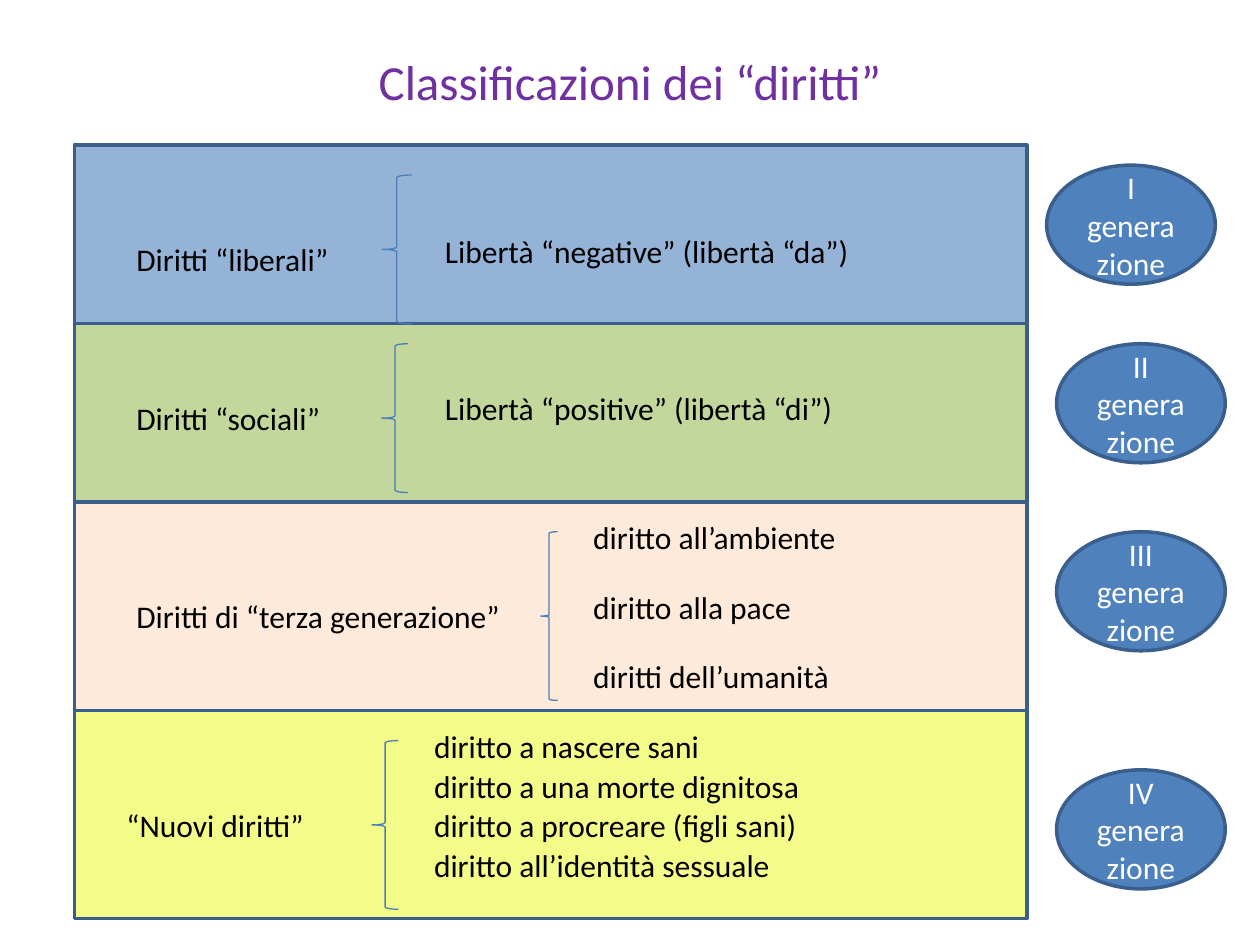
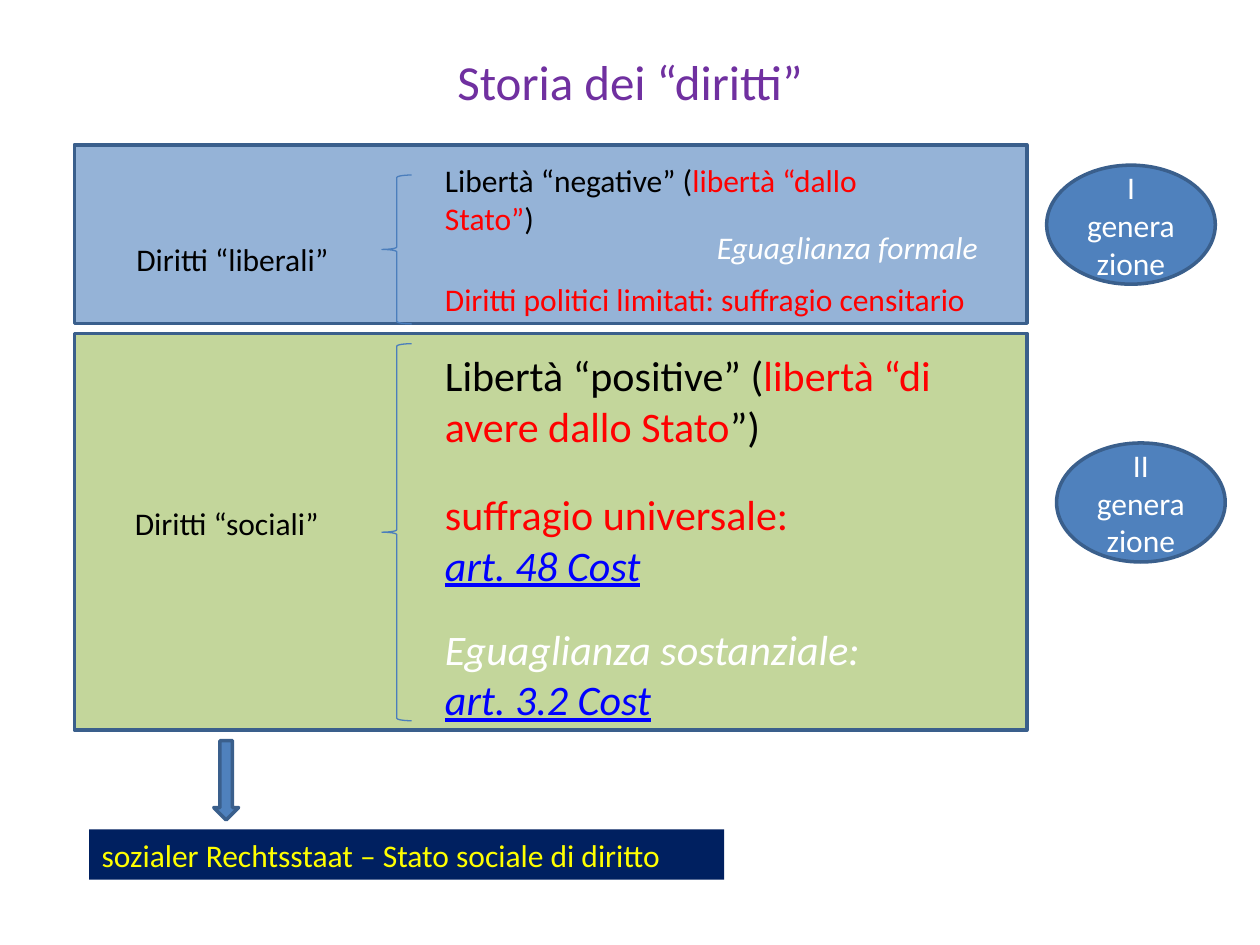
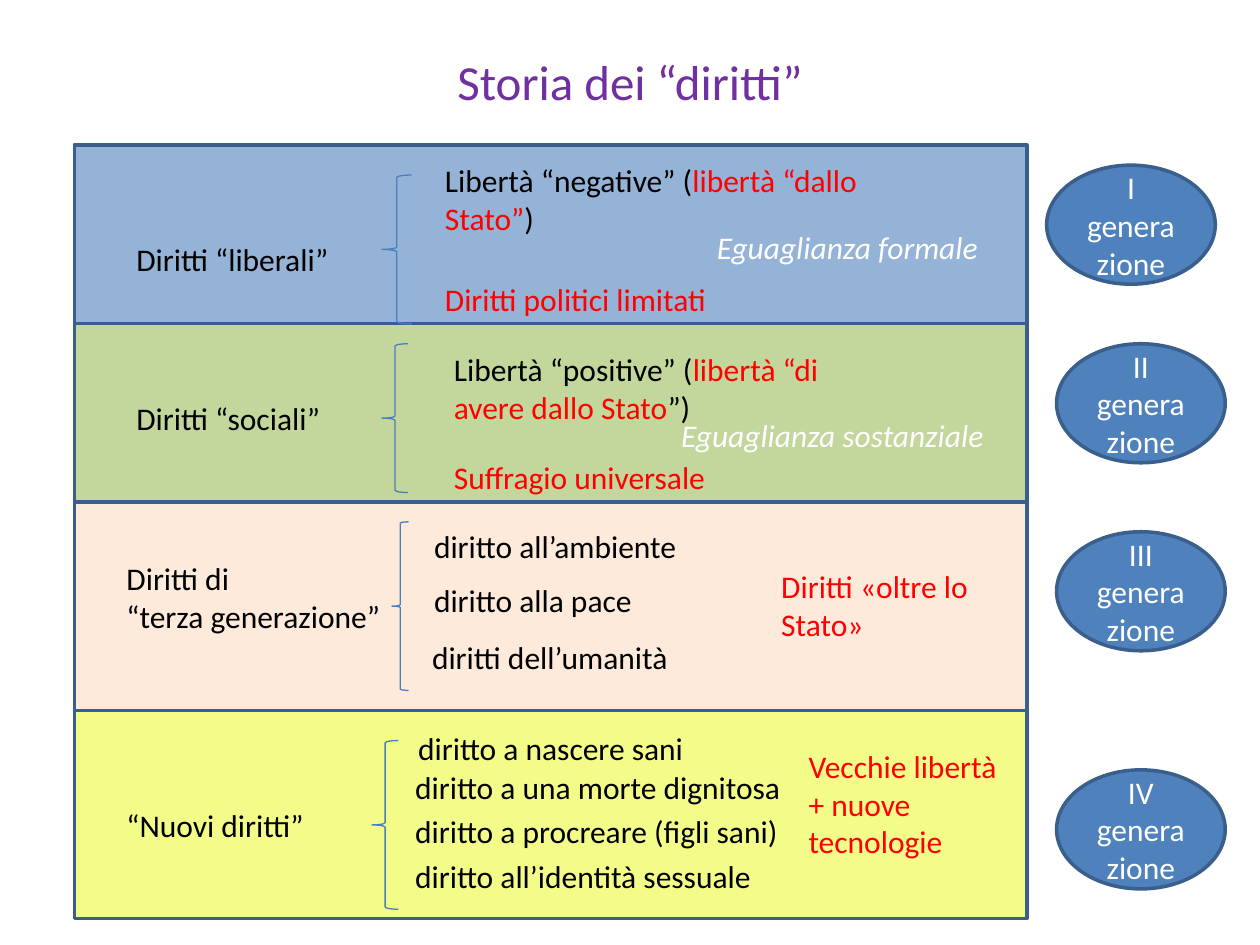
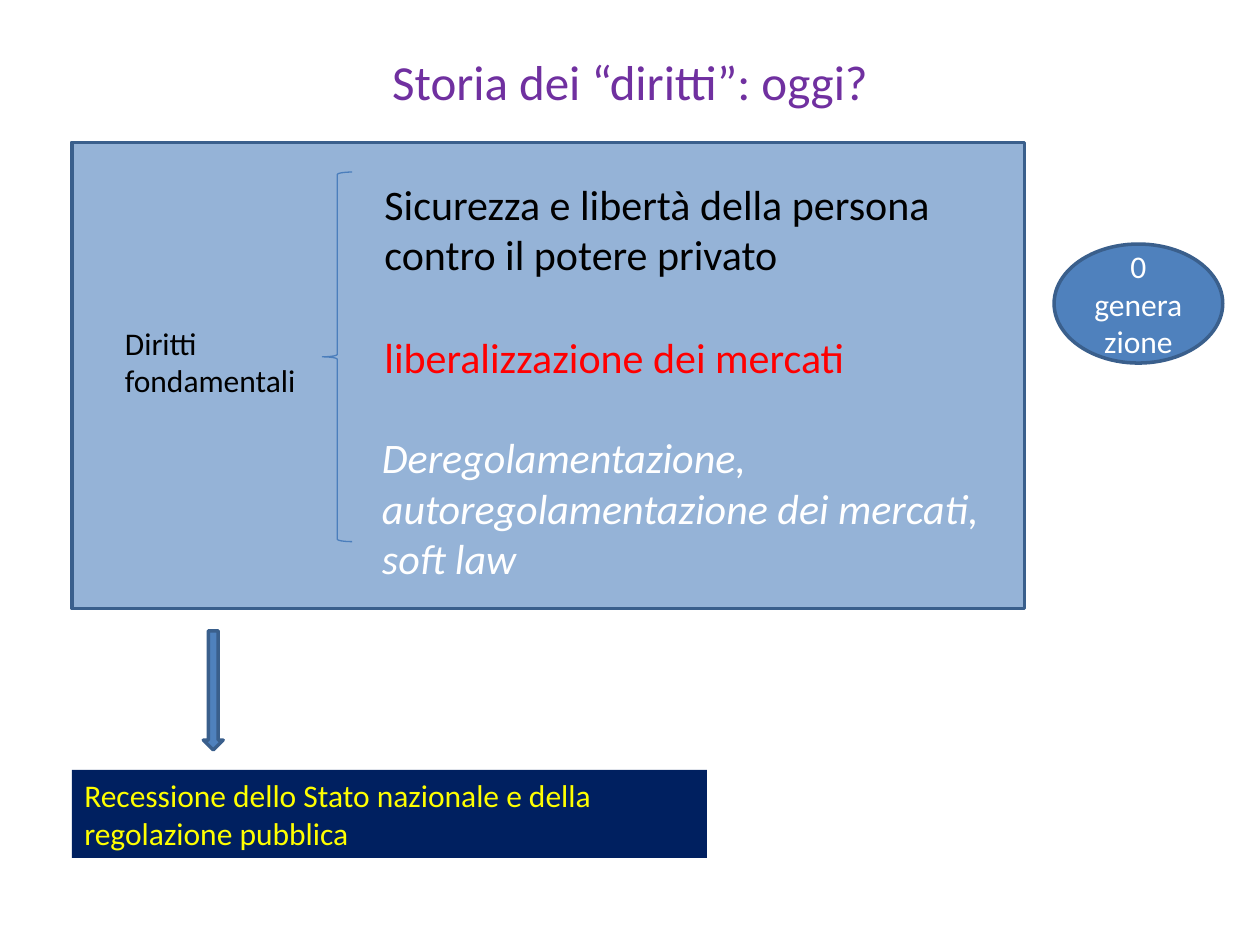
from dataclasses import dataclass, replace

from pptx import Presentation
from pptx.dml.color import RGBColor
from pptx.enum.shapes import MSO_SHAPE
from pptx.enum.text import MSO_ANCHOR, MSO_AUTO_SIZE, PP_ALIGN
from pptx.util import Cm, Pt

RECTANGLE = MSO_SHAPE.RECTANGLE
ELLIPSE = MSO_SHAPE.OVAL
LEFT_BRACE = MSO_SHAPE.LEFT_BRACE
DOWN_ARROW = MSO_SHAPE.DOWN_ARROW
LEFT, CENTER = PP_ALIGN.LEFT, PP_ALIGN.CENTER
TOP, MIDDLE = MSO_ANCHOR.TOP, MSO_ANCHOR.MIDDLE
GROW = MSO_AUTO_SIZE.SHAPE_TO_FIT_TEXT


@dataclass(frozen=True)
class Theme:
    font: str = "Calibri"
    title_size: int = 28
    large_size: int = 24
    body_size: int = 18
    outline_width: float = 2
    brace_width: float = 0.75
    title: str = "7030A0"
    ink: str = "000000"
    white: str = "FFFFFF"
    accent: str = "FF0000"
    article: str = "0000FF"
    liberal: str = "95B3D7"
    social: str = "C3D69B"
    third: str = "FDEADA"
    new: str = "F3FB89"
    badge: str = "4F81BD"
    outline: str = "3A5F8C"
    brace: str = "4B7EBC"
    outcome: str = "002060"
    outcome_text: str = "FFFF00"


THEME = Theme()

# All lengths below are in centimetres.
SLIDE_WIDTH, SLIDE_HEIGHT = 25.4, 19.05
BAND_LEFT, BAND_TOP, BAND_WIDTH = 1.5, 2.92, 19.2
BADGE_WIDTH, BADGE_HEIGHT = 3.4, 2.4
BADGE_LEFT = 21.3
OUTCOME_WIDTH = 12.8
TEXT_INSETS = 0.25
CM_PER_POINT = 2.54 / 72
LINE_SPACING = 1.2


@dataclass(frozen=True)
class Run:
    text: str
    color: str = THEME.ink
    italic: bool = False
    underline: bool = False
    new_paragraph: bool = False


@dataclass(frozen=True)
class Label:
    left: float
    top: float
    width: float
    runs: tuple[Run, ...]
    lines: int = 1
    size: int = THEME.body_size
    align: PP_ALIGN = LEFT
    fill: str | None = None

    @property
    def height(self) -> float:
        return self.lines * self.size * LINE_SPACING * CM_PER_POINT + TEXT_INSETS


@dataclass(frozen=True)
class Box:
    left: float
    top: float
    width: float
    height: float


@dataclass(frozen=True)
class Band:
    color: str
    height: float


@dataclass(frozen=True)
class Badge:
    ordinal: str
    top: float
    left: float = BADGE_LEFT


@dataclass(frozen=True)
class RightsSlide:
    title: str
    bands: tuple[Band, ...]
    braces: tuple[Box, ...]
    labels: tuple[Label, ...]
    badges: tuple[Badge, ...]
    arrows: tuple[Box, ...] = ()
    band_left: float = BAND_LEFT
    band_top: float = BAND_TOP
    band_gap: float = 0


def plain(left: float, top: float, width: float, text: str,
          color: str = THEME.ink, italic: bool = False, **options) -> Label:
    """Label in a single format."""
    return Label(left, top, width, (Run(text, color, italic),), **options)


def column(left: float, top: float, step: float,
           entries: tuple[tuple[str, float], ...]) -> tuple[Label, ...]:
    """Evenly stacked labels from (text, width) entries."""
    return tuple(plain(left, top + row * step, width, text)
                 for row, (text, width) in enumerate(entries))


def outcome(left: float, top: float, text: str, lines: int = 1) -> Label:
    return plain(left, top, OUTCOME_WIDTH, text, THEME.outcome_text,
                 lines=lines, fill=THEME.outcome)


def add_runs(frame, runs: tuple[Run, ...], size: int, align: PP_ALIGN) -> None:
    paragraph = frame.paragraphs[0]
    paragraph.alignment = align
    for run in runs:
        if run.new_paragraph:
            paragraph = frame.add_paragraph()
            paragraph.alignment = align
        piece = paragraph.add_run()
        piece.text = run.text
        piece.font.color.rgb = RGBColor.from_string(run.color)
        formats = {"name": THEME.font, "size": Pt(size),
                   "italic": run.italic, "underline": run.underline}
        for attribute, value in formats.items():
            setattr(piece.font, attribute, value)


def add_label(slide, label: Label) -> None:
    area = slide.shapes.add_textbox(Cm(label.left), Cm(label.top),
                                    Cm(label.width), Cm(label.height))
    if label.fill:
        area.fill.solid()
        area.fill.fore_color.rgb = RGBColor.from_string(label.fill)
    frame = area.text_frame
    formats = {"word_wrap": True, "auto_size": GROW, "vertical_anchor": TOP}
    for attribute, value in formats.items():
        setattr(frame, attribute, value)
    add_runs(frame, label.runs, label.size, label.align)


def add_outlined(slide, preset: MSO_SHAPE, box: Box, fill: str | None,
                 line: str = THEME.outline, line_width: float = THEME.outline_width):
    outlined = slide.shapes.add_shape(preset, Cm(box.left), Cm(box.top),
                                      Cm(box.width), Cm(box.height))
    outlined.shadow.inherit = False
    if fill:
        outlined.fill.solid()
        outlined.fill.fore_color.rgb = RGBColor.from_string(fill)
    else:
        outlined.fill.background()
    outlined.line.color.rgb = RGBColor.from_string(line)
    outlined.line.width = Pt(line_width)
    return outlined


def add_bands(slide, content: RightsSlide) -> None:
    """Stack the bands, drawing the lowest first."""
    placed = []
    top = content.band_top
    for band in content.bands:
        placed.append((Box(content.band_left, top, BAND_WIDTH, band.height), band.color))
        top += band.height + content.band_gap
    for box, color in reversed(placed):
        add_outlined(slide, RECTANGLE, box, color)


def add_badge(slide, badge: Badge) -> None:
    box = Box(badge.left, badge.top, BADGE_WIDTH, BADGE_HEIGHT)
    frame = add_outlined(slide, ELLIPSE, box, THEME.badge).text_frame
    frame.word_wrap = True
    frame.vertical_anchor = MIDDLE
    add_runs(frame, (Run(f"{badge.ordinal} generazione", THEME.white),),
             THEME.body_size, CENTER)


def add_rights_slide(deck, content: RightsSlide) -> None:
    slide = deck.slides.add_slide(deck.slide_layouts[6])
    add_bands(slide, content)
    add_label(slide, plain(1.9, 0.92, 21.6, content.title, THEME.title,
                           size=THEME.title_size, align=CENTER))
    for brace in content.braces:
        add_outlined(slide, LEFT_BRACE, brace, None, THEME.brace, THEME.brace_width)
    for badge in content.badges:
        add_badge(slide, badge)
    for label in content.labels:
        add_label(slide, label)
    for arrow in content.arrows:
        add_outlined(slide, DOWN_ARROW, arrow, THEME.badge)


LIBERAL_BAND = Band(THEME.liberal, 3.6)
SOCIAL_BAND = Band(THEME.social, 3.6)
FOUR_BANDS = (LIBERAL_BAND, SOCIAL_BAND, Band(THEME.third, 4.2), Band(THEME.new, 4.2))

LIBERAL_BRACE = Box(7.7, 3.53, 0.6, 3)
SOCIAL_BRACE = Box(7.7, 6.93, 0.53, 3)
NEW_BRACE = Box(7.5, 14.93, 0.53, 3.4)

FIRST_BADGE = Badge("I", 3.33, 21.1)
FOUR_BADGES = (FIRST_BADGE, Badge("II", 6.93), Badge("III", 10.72), Badge("IV", 15.52))

LIBERAL_RIGHTS = plain(2.5, 4.72, 4.6, "Diritti “liberali”")
SOCIAL_RIGHTS = plain(2.5, 7.92, 4.6, "Diritti “sociali”")
NEW_RIGHTS = plain(2.3, 16.13, 8.4, "“Nuovi diritti”")
NEGATIVE_FREEDOM = Label(8.72, 3.13, 9.2, (
    Run("Libertà “negative” ("),
    Run("libertà “dallo Stato”", THEME.accent),
    Run(")"),
), lines=2)
POSITIVE_FREEDOM = Label(8.9, 6.93, 9.4, (
    Run("Libertà “positive” ("),
    Run("libertà “di avere dallo Stato", THEME.accent),
    Run("”)"),
), lines=2)
FORMAL_EQUALITY = plain(14.2, 4.48, 7, "Eguaglianza formale", THEME.white, italic=True)

ENVIRONMENT = ("diritto all’ambiente", 7.8)
PEACE = ("diritto alla pace", 8.2)
HUMANITY = ("diritti dell’umanità", 6)
HEALTHY_BIRTH = ("diritto a nascere sani", 7.6)
DIGNIFIED_DEATH = ("diritto a una morte dignitosa", 9)
PROCREATION = ("diritto a procreare (figli sani)", 8)
SEXUAL_IDENTITY = ("diritto all’identità sessuale", 7.8)

CLASSIFICATION = RightsSlide(
    title="Classificazioni dei “diritti”",
    bands=FOUR_BANDS,
    braces=(LIBERAL_BRACE, SOCIAL_BRACE, Box(10.9, 10.72, 0.34, 3.4), NEW_BRACE),
    labels=(
        LIBERAL_RIGHTS,
        plain(8.72, 4.55, 9.2, "Libertà “negative” (libertà “da”)"),
        SOCIAL_RIGHTS,
        plain(8.72, 7.72, 9.4, "Libertà “positive” (libertà “di”)"),
        plain(2.5, 11.91, 8.2, "Diritti di “terza generazione”"),
        *column(11.71, 10.31, 1.41, (ENVIRONMENT, PEACE, HUMANITY)),
        NEW_RIGHTS,
        *column(8.5, 14.53, 0.8,
                (HEALTHY_BIRTH, DIGNIFIED_DEATH, PROCREATION, SEXUAL_IDENTITY)),
    ),
    badges=FOUR_BADGES,
)

FIRST_TWO_GENERATIONS = RightsSlide(
    title="Storia dei “diritti”",
    bands=(LIBERAL_BAND, replace(SOCIAL_BAND, height=8)),
    band_gap=0.2,
    braces=(LIBERAL_BRACE, Box(7.7, 6.93, 0.6, 7.6)),
    labels=(
        LIBERAL_RIGHTS,
        NEGATIVE_FREEDOM,
        plain(8.72, 5.53, 11.8, "Diritti politici limitati: suffragio censitario",
              THEME.accent),
        FORMAL_EQUALITY,
        replace(SOCIAL_RIGHTS, left=2.47, top=10.03),
        replace(POSITIVE_FREEDOM, left=8.72, width=11.4, size=THEME.large_size),
        Label(8.72, 9.73, 7.8, (
            Run("suffragio universale: ", THEME.accent),
            Run("art. 48 Cost", THEME.article, italic=True, underline=True),
        ), lines=2, size=THEME.large_size),
        Label(8.72, 12.44, 9.4, (
            Run("Eguaglianza sostanziale: ", THEME.white, italic=True),
            Run("art. 3.2 Cost", THEME.article, italic=True, underline=True),
        ), lines=2, size=THEME.large_size),
        outcome(1.8, 16.72, "sozialer Rechtsstaat – Stato sociale di diritto"),
    ),
    badges=(FIRST_BADGE, Badge("II", 8.93)),
    arrows=(Box(4.31, 14.93, 0.5, 1.6),),
)

FOUR_GENERATIONS = RightsSlide(
    title="Storia dei “diritti”",
    bands=FOUR_BANDS,
    braces=(LIBERAL_BRACE, SOCIAL_BRACE, Box(7.9, 10.52, 0.34, 3.4), NEW_BRACE),
    labels=(
        LIBERAL_RIGHTS,
        NEGATIVE_FREEDOM,
        plain(8.72, 5.53, 7, "Diritti politici limitati", THEME.accent),
        FORMAL_EQUALITY,
        SOCIAL_RIGHTS,
        POSITIVE_FREEDOM,
        plain(8.9, 9.1, 7.8, "Suffragio universale", THEME.accent),
        plain(13.48, 8.26, 7, "Eguaglianza sostanziale", THEME.white, italic=True),
        Label(2.3, 11.14, 6.6, (
            Run("Diritti di"),
            Run("“terza generazione”", new_paragraph=True),
        ), lines=2),
        *column(8.5, 10.5, 1.09, (ENVIRONMENT, PEACE)),
        *column(8.46, 12.74, 0, (HUMANITY,)),
        plain(15.5, 11.3, 5, "Diritti «oltre lo Stato»", THEME.accent, lines=2),
        NEW_RIGHTS,
        *column(8.18, 14.57, 0, (HEALTHY_BIRTH,)),
        *column(8.12, 15.35, 0.9, (DIGNIFIED_DEATH, PROCREATION, SEXUAL_IDENTITY)),
        plain(16.05, 14.93, 4.65, "Vecchie libertà + nuove tecnologie",
              THEME.accent, lines=3),
    ),
    badges=FOUR_BADGES,
)

TODAY = RightsSlide(
    title="Storia dei “diritti”: oggi?",
    bands=(replace(LIBERAL_BAND, height=9.4),),
    band_left=1.45,
    band_top=2.87,
    braces=(Box(6.5, 3.47, 0.6, 7.45),),
    labels=(
        plain(2.27, 6.4, 5.2, "Diritti fondamentali", lines=2),
        plain(7.5, 3.47, 11.8, "Sicurezza e libertà della persona contro il potere privato",
              lines=2, size=THEME.large_size),
        plain(7.5, 6.55, 11.2, "liberalizzazione dei mercati", THEME.accent,
              size=THEME.large_size),
        plain(7.45, 8.58, 12.58,
              "Deregolamentazione, autoregolamentazione dei mercati, soft law",
              THEME.white, italic=True, lines=3, size=THEME.large_size),
        outcome(1.45, 15.52,
                "Recessione dello Stato nazionale e della regolazione pubblica", lines=2),
    ),
    badges=(Badge("0", 4.92, 21.25),),
    arrows=(Box(4.1, 12.72, 0.4, 2.4),),
)


def main() -> None:
    deck = Presentation()
    deck.slide_width, deck.slide_height = Cm(SLIDE_WIDTH), Cm(SLIDE_HEIGHT)
    for content in (CLASSIFICATION, FIRST_TWO_GENERATIONS, FOUR_GENERATIONS, TODAY):
        add_rights_slide(deck, content)
    deck.save("out.pptx")


if __name__ == "__main__":
    main()
